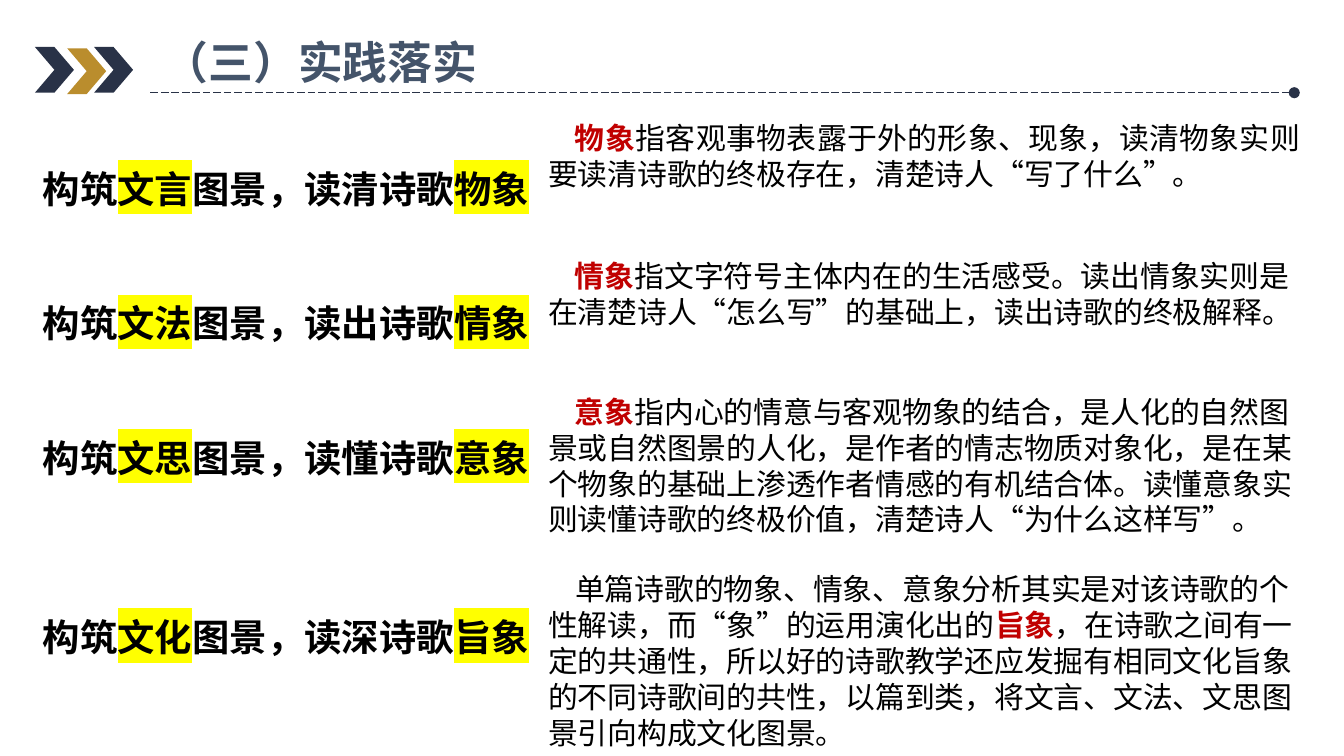
from lxml import etree
from pptx import Presentation
from pptx import util as u
from pptx.dml.color import RGBColor
from pptx.enum import dml, shapes, text
from pptx.oxml import ns

FONT = "Noto Sans CJK SC"
NAVY, GOLD, SLATE = "293247", "BA8D2D", "44546A"
BLACK, RED, YELLOW = "000000", "C00000", "FFFF00"

# Content: key words stand between asterisks
TITLE = "（三）实践落实"
STEPS = [  # wording, line spacing
    ("构筑*文言*图景，读清诗歌*物象*", 3.0),
    ("构筑*文法*图景，读出诗歌*情象*", 3.0),
    ("构筑*文思*图景，读懂诗歌*意象*", 3.0),
    ("构筑*文化*图景，读深诗歌*旨象*", 4.0),
]
EXPLANATIONS = [  # top, width, height, justified, wording
    (0.84, 5.8, 0.64, True,
     "*物象*指客观事物表露于外的形象、现象，读清物象实则要读清诗歌的终极存在，清楚诗人“写了什么”。"),
    (1.87, 5.8, 0.64, False,
     "*情象*指文字符号主体内在的生活感受。读出情象实则是在清楚诗人“怎么写”的基础上，读出诗歌的终极解释。"),
    (2.88, 5.8, 1.18, False,
     "*意象*指内心的情意与客观物象的结合，是人化的自然图景或自然图景的人化，是作者的情志物质对象化，"
     "是在某个物象的基础上渗透作者情感的有机结合体。读懂意象实则读懂诗歌的终极价值，清楚诗人“为什么这样写”。"),
    (4.2, 5.91, 1.45, False,
     "单篇诗歌的物象、情象、意象分析其实是对该诗歌的个性解读，而“象”的运用演化出的*旨象*，"
     "在诗歌之间有一定的共通性，所以好的诗歌教学还应发掘有相同文化旨象的不同诗歌间的共性，"
     "以篇到类，将文言、文法、文思图景引向构成文化图景。"),
]
CHEVRONS = [(0.5, 0.36, GOLD), (0.7, 0.35, NAVY), (0.26, 0.35, NAVY)]


def color(hex_code):
    return RGBColor.from_string(hex_code)


def set_font(font, props_of, size):
    """Set size and typeface for Latin and East Asian text."""
    font.size = u.Pt(size)
    font.name = FONT
    latin = props_of().find(ns.qn("a:latin"))
    latin.addnext(etree.Element(ns.qn("a:ea"), typeface=FONT))


def add_box(left, top, width, height, wrap=True):
    box = slide.shapes.add_textbox(*map(u.Inches, (left, top, width, height)))
    frame = box.text_frame
    frame.word_wrap = wrap
    frame.auto_size = text.MSO_AUTO_SIZE.SHAPE_TO_FIT_TEXT
    return frame


def write(paragraph, wording, size, ink=BLACK, bold=False, key_ink=None, highlight=None):
    """Fill a paragraph, marking the key words between asterisks."""
    set_font(paragraph.font, lambda: paragraph._p.pPr.find(ns.qn("a:defRPr")), size)
    for i, part in enumerate(wording.split("*")):
        if not part:
            continue
        is_key = i % 2 == 1
        run = paragraph.add_run()
        run.text = part
        run.font.bold = bold or is_key
        run.font.color.rgb = color(key_ink if is_key and key_ink else ink)
        props = run._r.get_or_add_rPr()
        props.set("lang", "zh-CN")
        if is_key and highlight:
            mark = etree.SubElement(props, ns.qn("a:highlight"))
            etree.SubElement(mark, ns.qn("a:srgbClr"), val=highlight)
        set_font(run.font, run._r.get_or_add_rPr, size)


prs = Presentation()
prs.slide_width = u.Inches(10)
prs.slide_height = prs.slide_width * 9 // 16
slide = prs.slides.add_slide(prs.slide_layouts[6])

# Header: chevrons
for left, top, fill in CHEVRONS:
    chevron = slide.shapes.add_shape(
        shapes.MSO_SHAPE.CHEVRON, *map(u.Inches, (left, top, 0.29, 0.34)))
    chevron.shadow.inherit = False
    chevron.fill.solid()
    chevron.fill.fore_color.rgb = color(fill)
    chevron.line.fill.background()

# Header: dashed rule with a round end
rule = slide.shapes.add_connector(
    shapes.MSO_CONNECTOR.STRAIGHT, *map(u.Inches, (1.12, 0.69, 9.63, 0.69)))
rule.line.color.rgb = color(NAVY)
rule.line.width = u.Pt(0.5)
rule.line.dash_style = dml.MSO_LINE.LONG_DASH
etree.SubElement(rule.line._get_or_add_ln(), ns.qn("a:tailEnd"), type="oval")
etree.SubElement(rule._element.spPr, ns.qn("a:effectLst"))

# Header: title
title = add_box(1.12, 0.21, 2.66, 0.5, wrap=False)
write(title.paragraphs[0], TITLE, 24, SLATE, bold=True)

# Left: the four steps
steps = add_box(0.22, 0.52, 5, 4.21)
for i, (wording, spacing) in enumerate(STEPS):
    step = steps.add_paragraph() if i else steps.paragraphs[0]
    step.alignment = text.PP_ALIGN.JUSTIFY
    step.line_spacing = spacing
    write(step, wording, 20, bold=True, highlight=YELLOW)

# Right: one explanation for each step, first line indented
for top, width, height, justified, wording in EXPLANATIONS:
    explanation = add_box(3.98, top, width, height).paragraphs[0]
    if justified:
        explanation.alignment = text.PP_ALIGN.JUSTIFY
        explanation.space_before = u.Pt(6)
    write(explanation, wording, 16, key_ink=RED)
    explanation._p.pPr.set("marL", "0")
    explanation._p.pPr.set("indent", str(u.Inches(0.2)))

prs.save("out.pptx")
